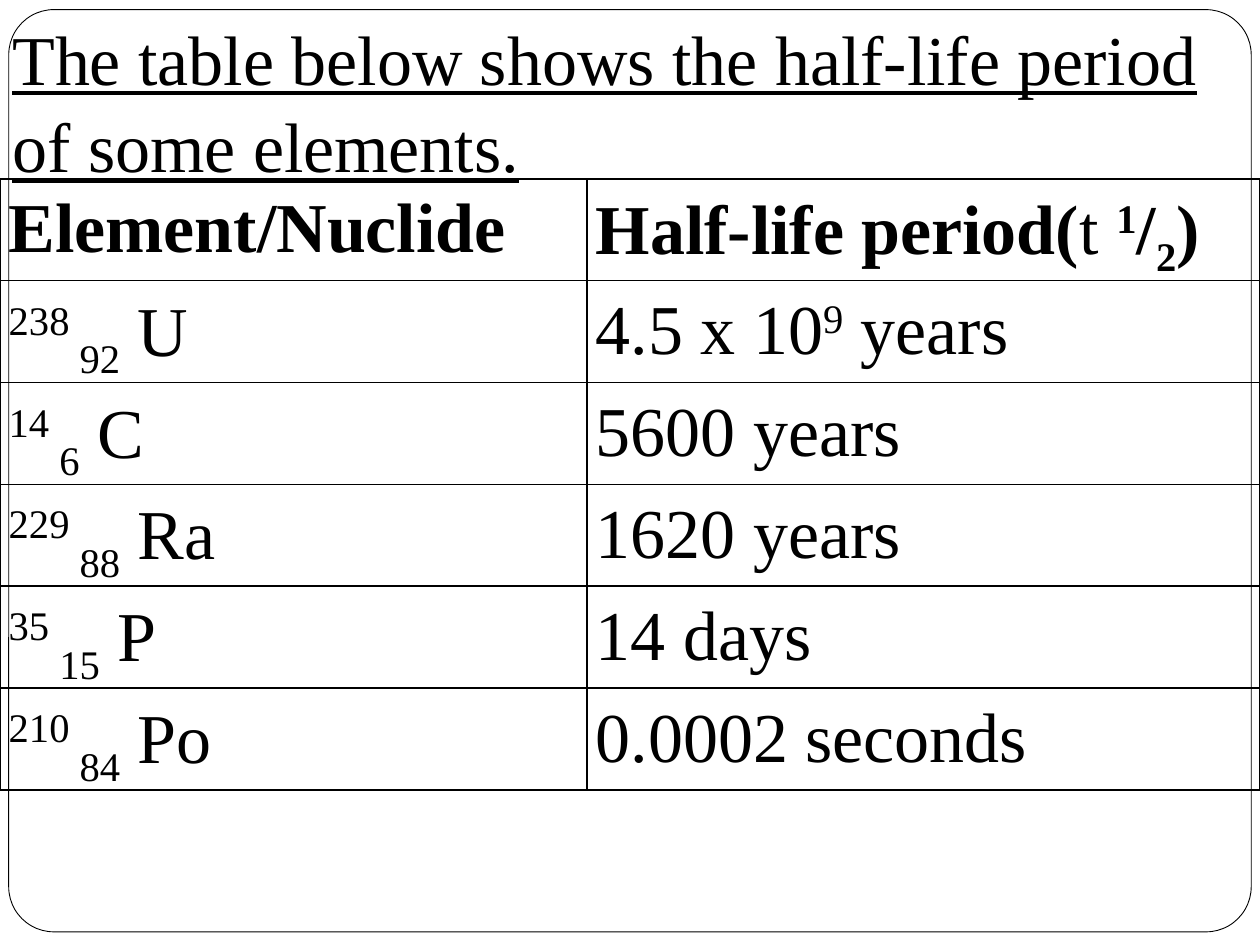
"""Build a slide with a table of half-life periods of some elements."""
from dataclasses import dataclass

from lxml.etree import SubElement
from pptx import Presentation
from pptx.dml.color import RGBColor
from pptx.enum.shapes import MSO_SHAPE
from pptx.enum.text import MSO_ANCHOR
from pptx.oxml.ns import qn
from pptx.util import Pt


@dataclass(frozen=True)
class Theme:
    font: str = "Times New Roman"
    size: int = 40
    ink: str = "000000"
    paper: str = "FFFFFF"
    frame_line: float = 0.5
    border: float = 1


THEME = Theme()
SUPERSCRIPT, SUBSCRIPT = 30, -25
TITLE = "The table below shows the half-life period of some elements."
HEADER = (
    [("Element/Nuclide", 0, True)],
    [
        ("Half-life period(", 0, True),
        ("t ", 0, False),
        ("1", SUPERSCRIPT, True),
        ("/", 0, True),
        ("2", SUBSCRIPT, True),
        (")", 0, True),
    ],
)
NUCLIDES = [
    ("238", "92", "U", [("4.5 x 10", 0), ("9", SUPERSCRIPT), (" years", 0)]),
    ("14", "6", "C", [("5600 years", 0)]),
    ("229", "88", "Ra", [("1620 years", 0)]),
    ("35", "15", "P", [("14 days", 0)]),
    ("210", "84", "Po", [("0.0002 seconds", 0)]),
]
SLIDE_WIDTH, SLIDE_HEIGHT = 720, 540
FRAME = (5, 5.5, 710, 527)
TITLE_BOX = (0, 0, 720, 126)
TABLE_TOP, ROW_HEIGHT = 102.2, 58.2
COLUMN_WIDTHS = (335.5, 384.5)


def add_run(paragraph, text, baseline=0, bold=False, underline=False):
    run = paragraph.add_run()
    run.text = text
    font = run.font
    font.name, font.size = THEME.font, Pt(THEME.size)
    font.bold, font.underline = bold, underline
    font.color.rgb = RGBColor.from_string(THEME.ink)
    if baseline:
        run._r.get_or_add_rPr().set("baseline", str(baseline * 1000))


def add_frame(slide):
    frame = slide.shapes.add_shape(MSO_SHAPE.ROUNDED_RECTANGLE, *map(Pt, FRAME))
    frame.adjustments[0] = 0.049
    frame.shadow.inherit = False
    frame.fill.solid()
    frame.fill.fore_color.rgb = RGBColor.from_string(THEME.paper)
    frame.line.color.rgb = RGBColor.from_string(THEME.ink)
    frame.line.width = Pt(THEME.frame_line)


def add_title(slide):
    text_frame = slide.shapes.add_textbox(*map(Pt, TITLE_BOX)).text_frame
    text_frame.word_wrap = True
    text_frame.margin_top = Pt(7)
    paragraph = text_frame.paragraphs[0]
    paragraph.line_spacing = 1.04
    add_run(paragraph, TITLE, underline=True)


def add_borders(cell):
    properties = cell._tc.get_or_add_tcPr()
    for side in ("a:lnL", "a:lnR", "a:lnT", "a:lnB"):
        line = SubElement(properties, qn(side), w=str(Pt(THEME.border)))
        fill = SubElement(line, qn("a:solidFill"))
        SubElement(fill, qn("a:srgbClr"), val=THEME.ink)


def fill_cell(cell, runs):
    add_borders(cell)
    cell.fill.background()
    cell.margin_left = cell.margin_right = Pt(5)
    cell.margin_top = cell.margin_bottom = 0
    cell.vertical_anchor = MSO_ANCHOR.TOP
    paragraph = cell.text_frame.paragraphs[0]
    paragraph.line_spacing = 1.15
    for run in runs:
        add_run(paragraph, *run)


def add_half_life_table(slide):
    rows = [HEADER]
    for mass, number, symbol, period in NUCLIDES:
        nuclide = [(f"{mass} ", SUPERSCRIPT), (number, SUBSCRIPT), (f" {symbol}", 0)]
        rows.append((nuclide, period))
    table = slide.shapes.add_table(
        len(rows), len(COLUMN_WIDTHS), 0, Pt(TABLE_TOP),
        Pt(sum(COLUMN_WIDTHS)), Pt(ROW_HEIGHT * len(rows)),
    ).table
    table.first_row = table.horz_banding = False
    for column, width in zip(table.columns, COLUMN_WIDTHS):
        column.width = Pt(width)
    for table_row, contents in zip(table.rows, rows):
        table_row.height = Pt(ROW_HEIGHT)
        for cell, runs in zip(table_row.cells, contents):
            fill_cell(cell, runs)


def main():
    presentation = Presentation()
    presentation.slide_width = Pt(SLIDE_WIDTH)
    presentation.slide_height = Pt(SLIDE_HEIGHT)
    slide = presentation.slides.add_slide(presentation.slide_layouts[6])
    add_frame(slide)
    add_half_life_table(slide)
    add_title(slide)
    presentation.save("out.pptx")


if __name__ == "__main__":
    main()
